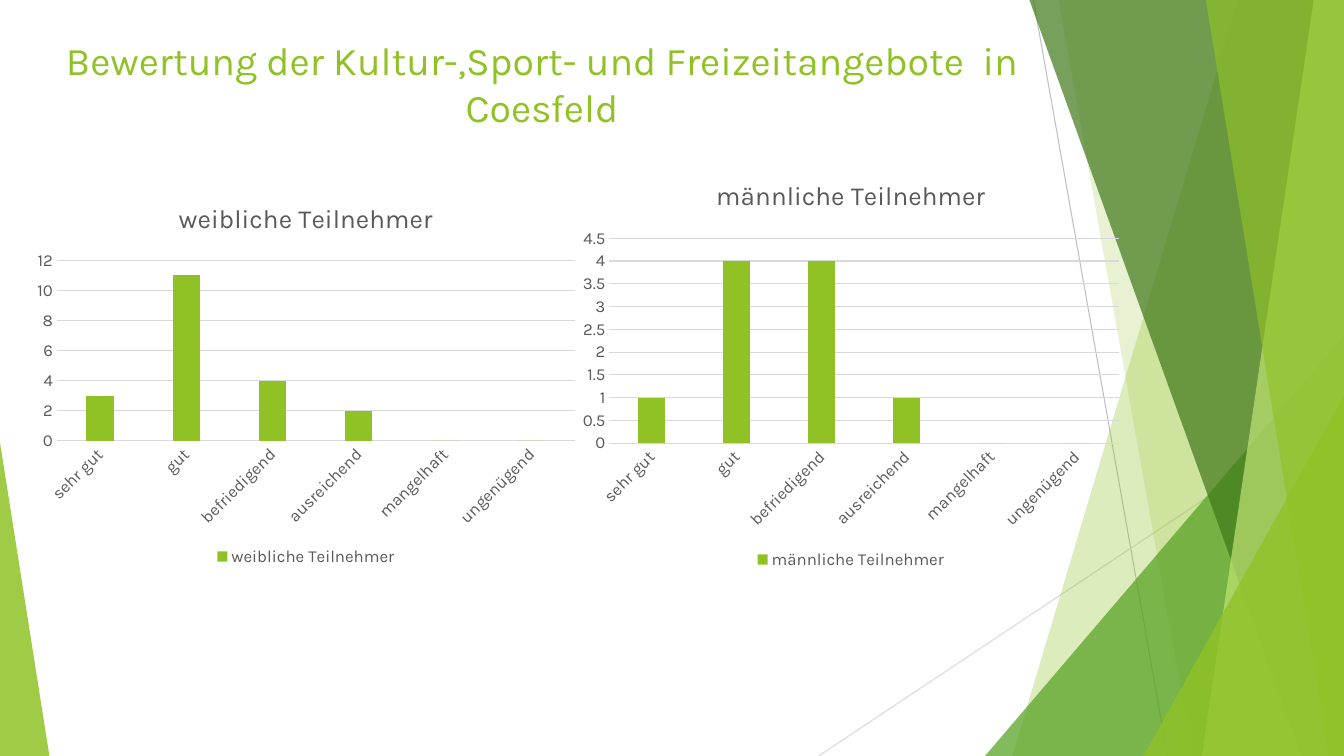
from dataclasses import dataclass

from lxml import etree
from pptx import Presentation
from pptx import util as u
from pptx.chart.data import CategoryChartData
from pptx.dml.color import RGBColor
from pptx.enum import chart as ch
from pptx.enum import shapes, text
from pptx.oxml.ns import qn

WIDTH, HEIGHT = 13.33, 7.5


@dataclass
class Theme:
    font: str = "Karla"
    lime: str = "90C226"
    leaf: str = "54A021"
    moss: str = "3F7819"
    pale: str = "C0E474"
    gray: str = "595959"
    rule: str = "BFBFBF"
    grid: str = "D9D9D9"
    head: float = 28
    title: float = 18.6
    label: float = 12
    line: float = 0.75


class Deck:
    def __init__(self, theme):
        self.theme = theme
        self.prs = Presentation()
        self.prs.slide_width = u.Inches(WIDTH)
        self.prs.slide_height = u.Inches(HEIGHT)
        self.slide = self.prs.slides.add_slide(self.prs.slide_layouts[6])

    def style(self, font, size, color):
        font.name = self.theme.font
        font.size = u.Pt(size)
        font.bold = False
        font.color.rgb = RGBColor.from_string(color)

    def stroke(self, line, color):
        line.color.rgb = RGBColor.from_string(color)
        line.width = u.Pt(self.theme.line)

    def paint(self, shape, color, alpha):
        """Fill a shape without outline; alpha is its opacity in percent."""
        shape.shadow.inherit = False
        shape.line.fill.background()
        shape.fill.solid()
        shape.fill.fore_color.rgb = RGBColor.from_string(color)
        tone = shape.fill._xPr.find(".//" + qn("a:srgbClr"))
        etree.SubElement(tone, qn("a:alpha"), val=str(alpha * 1000))

    def line(self, start, end, color):
        points = [u.Inches(n) for n in start + end]
        line = self.slide.shapes.add_connector(
            shapes.MSO_CONNECTOR.STRAIGHT, *points)
        self.stroke(line.line, color)
        etree.SubElement(line._element.spPr, qn("a:effectLst"))

    def band(self, top, foot, color, alpha):
        """Fill from a slanted left edge to the right side of the slide."""
        edge = [(top, 0), (WIDTH, 0), (WIDTH, HEIGHT), (foot, HEIGHT)]
        points = [(u.Inches(x), u.Inches(y)) for x, y in edge]
        form = self.slide.shapes.build_freeform(*points[0])
        form.add_line_segments(points[1:], close=True)
        self.paint(form.convert_to_shape(), color, alpha)

    def wedge(self, left, top, width, peak, color, alpha):
        """Stand a triangle on the slide's foot, its peak at 0 to 1 of the width."""
        box = [u.Inches(n) for n in (left, top, width, HEIGHT - top)]
        shape = self.slide.shapes.add_shape(
            shapes.MSO_SHAPE.ISOSCELES_TRIANGLE, *box)
        shape.adjustments[0] = peak
        self.paint(shape, color, alpha)

    def head(self, words, *box):
        frame = self.slide.shapes.add_textbox(
            *[u.Inches(n) for n in box]).text_frame
        frame.word_wrap = True
        frame.auto_size = text.MSO_AUTO_SIZE.SHAPE_TO_FIT_TEXT
        frame.text = words
        par = frame.paragraphs[0]
        par.alignment = text.PP_ALIGN.CENTER
        self.style(par.runs[0].font, self.theme.head, self.theme.lime)

    def chart(self, name, cats, vals, *box):
        theme = self.theme
        data = CategoryChartData()
        data.categories = cats
        data.add_series(name, vals)
        chart = self.slide.shapes.add_chart(
            ch.XL_CHART_TYPE.COLUMN_CLUSTERED,
            *[u.Inches(n) for n in box], data).chart
        self.style(chart.font, theme.label, theme.gray)

        chart.has_title = True
        frame = chart.chart_title.text_frame
        frame.text = name
        self.style(frame.paragraphs[0].runs[0].font, theme.title, theme.gray)

        chart.has_legend = True
        chart.legend.position = ch.XL_LEGEND_POSITION.BOTTOM
        chart.legend.include_in_layout = False
        self.style(chart.legend.font, theme.label, theme.gray)

        plot = chart.plots[0]
        plot.gap_width = 219
        plot.overlap = -27
        plot.vary_by_categories = False
        fill = plot.series[0].format.fill
        fill.solid()
        fill.fore_color.rgb = RGBColor.from_string(theme.lime)

        for axis in (chart.category_axis, chart.value_axis):
            axis.major_tick_mark = ch.XL_TICK_MARK.NONE
            axis.minor_tick_mark = ch.XL_TICK_MARK.NONE
            self.style(axis.tick_labels.font, theme.label, theme.gray)
        self.stroke(chart.category_axis.format.line, theme.grid)
        slant = chart.category_axis._element.find(".//" + qn("a:bodyPr"))
        slant.set("rot", str(-45 * 60000))
        chart.value_axis.format.line.fill.background()
        self.stroke(chart.value_axis.major_gridlines.format.line, theme.grid)


def main():
    theme = Theme()
    deck = Deck(theme)

    deck.line((10.25, 0), (11.58, HEIGHT), theme.rule)
    deck.line((WIDTH, 4.03), (8.12, HEIGHT), theme.grid)
    deck.band(12.28, 10.04, theme.lime, 30)
    deck.band(10.5, 11.83, theme.lime, 20)
    deck.wedge(9.77, 3.33, 3.56, 1, theme.leaf, 72)
    deck.band(10.21, 12.91, theme.moss, 70)
    deck.band(13.03, 11.92, theme.pale, 70)
    deck.band(11.96, 13.18, theme.lime, 65)
    deck.wedge(11.34, 3.93, 1.99, 1, theme.lime, 80)
    deck.wedge(0, 4.39, 0.49, 0, theme.lime, 85)

    deck.head("Bewertung der Kultur-,Sport- und Freizeitangebote  in Coesfeld",
              0, 0.31, 10.75, 1.04)
    marks = ["sehr gut", "gut", "befriedigend", "ausreichend",
             "mangelhaft", "ungenügend"]
    deck.chart("weibliche Teilnehmer", marks, (3, 11, 4, 2, 0, 0),
               0.26, 1.82, 5.55, 3.84)
    deck.chart("männliche Teilnehmer", marks, (1, 4, 4, 1, 0, 0),
               5.67, 1.59, 5.54, 4.1)
    deck.prs.save("out.pptx")


if __name__ == "__main__":
    main()
